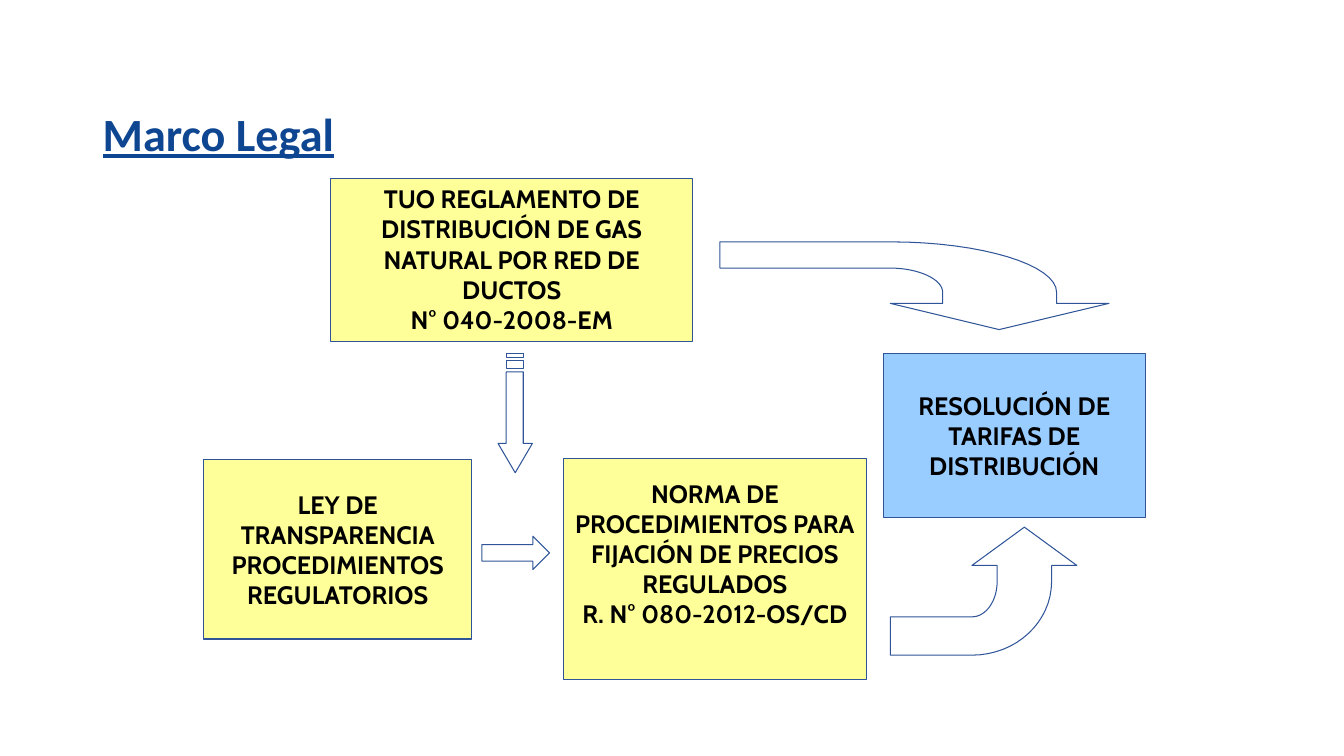
from dataclasses import dataclass
from lxml import etree
from pptx import Presentation, util as u
from pptx.enum import shapes as kinds, text as txt
from pptx.dml.color import RGBColor
from pptx.oxml.ns import qn

CELL = u.Inches(0.1)  # side of one grid column or row
COLS, ROWS = 133.3, 75
STEPS = 16  # chords per curve
HUES = {"yellow": "FFFF99", "blue": "99CCFF", "line": "2F5498",
        "white": "FFFFFF", "black": "000000", "title": "0F4691"}

Step = tuple[float, ...]  # 2 numbers: a line's end; 6: a Bézier curve
Path = list[Step]


@dataclass
class Box:
    area: tuple[float, float, float, float]
    hue: str
    inset: float
    lines: list[str]


BOXES = [
    Box((32.8, 17.7, 35.9, 16.2), "yellow", 0.5,
        ["TUO REGLAMENTO DE DISTRIBUCIÓN DE GAS NATURAL POR RED DE",
         "DUCTOS", "N° 040-2008-EM"]),
    Box((20.2, 45.6, 26.6, 17.8), "yellow", 2.9,
        ["LEY DE TRANSPARENCIA", "PROCEDIMIENTOS REGULATORIOS"]),
    Box((55.9, 45.5, 30, 21.9), "yellow", 1.9,
        ["NORMA DE PROCEDIMIENTOS PARA FIJACIÓN DE PRECIOS REGULADOS",
         "R. N° 080-2012-OS/CD"]),
    Box((87.6, 35.1, 26, 16.2), "blue", 3.6,
        ["RESOLUCIÓN DE TARIFAS DE DISTRIBUCIÓN"]),
]


def bar(top: float, end: float) -> Path:
    """Outline one stripe of the downward arrow's tail."""
    return [(51.9, top), (50.2, top), (50.2, end), (51.9, end)]


DOWN: list[Path] = [
    [(52.8, 44), (51.9, 44), (51.9, 36.9), (50.2, 36.9), (50.2, 44),
     (49.4, 44), (51.1, 46.9)],
    bar(35.8, 36.6), bar(35.1, 35.5),
]
OVER: list[Path] = [
    [(99.1, 32.7), (110, 30.1), (104.8, 30.1), (104.8, 29),
     (104.8, 26.3, 97.4, 24, 88.3, 24), (71.4, 24), (71.4, 26.6),
     (88.3, 26.6), (91.1, 26.6, 93.5, 27.7, 93.5, 29),
     (93.5, 30.1), (88.3, 30.1)],
]
UNDER: list[Path] = [
    [(101.6, 52.3), (106.8, 56.1), (104.3, 56.1), (104.3, 57.7),
     (104.3, 61.7, 100.8, 65, 96.4, 65), (88.3, 65), (88.3, 61.2),
     (96.4, 61.2), (97.8, 61.2, 98.9, 59.6, 98.9, 57.7),
     (98.9, 56.1), (96.4, 56.1)],
]


def grid(*cells: float) -> list[u.Emu]:
    return [u.Emu(round(n * CELL)) for n in cells]


def tint(name: str) -> RGBColor:
    return RGBColor.from_string(HUES[name])


def paint(shape, hue: str, alpha: int = 100) -> None:
    shape.shadow.inherit = False
    shape.fill.solid()
    shape.fill.fore_color.rgb = tint(hue)
    shape.line.color.rgb = tint("line")
    shape.line.width = u.Pt(0.75)
    if alpha < 100:
        tone = shape.fill._xPr.find(qn("a:solidFill"))[0]
        etree.SubElement(tone, qn("a:alpha")).set("val", str(alpha * 1000))


def flatten(path: Path) -> list[tuple[u.Emu, u.Emu]]:
    """Turn lines and curves into plain points."""
    out: list[Step] = []
    for step in path:
        if len(step) == 2:
            out.append(step)
            continue
        knots = [out[-1], step[:2], step[2:4], step[4:]]
        for i in range(1, STEPS + 1):
            t = i / STEPS
            mix = ((1 - t) ** 3, 3 * t * (1 - t) ** 2,
                   3 * t ** 2 * (1 - t), t ** 3)
            out.append(tuple(sum(m * k[a] for m, k in zip(mix, knots))
                             for a in (0, 1)))
    return [tuple(grid(*p)) for p in out]


def write(frame, lines: list[str], face: str, size: int, hue: str) -> None:
    frame.word_wrap = True
    frame.text = "\n".join(lines)
    for para in frame.paragraphs:
        font = para.font
        font.name, font.size, font.bold = face, u.Pt(size), True
        font.color.rgb = tint(hue)


def draw_box(slide, box: Box) -> None:
    shape = slide.shapes.add_shape(kinds.MSO_SHAPE.RECTANGLE, *grid(*box.area))
    paint(shape, box.hue)
    frame = shape.text_frame
    write(frame, box.lines, "Cabin", 18, "black")
    frame.vertical_anchor = txt.MSO_ANCHOR.TOP
    frame.margin_top = grid(box.inset)[0]
    for para in frame.paragraphs:
        para.alignment = txt.PP_ALIGN.CENTER


def draw_arrow(slide, paths: list[Path]) -> None:
    first, *rest = map(flatten, paths)
    pen = slide.shapes.build_freeform(*first[0])
    pen.add_line_segments(first[1:])
    for points in rest:
        pen.move_to(*points[0])
        pen.add_line_segments(points[1:])
    paint(pen.convert_to_shape(), "white", 41)


def draw_title(slide) -> None:
    frame = slide.shapes.add_textbox(*grid(9.2, 7.7, 105.4, 11.7)).text_frame
    write(frame, ["Marco Legal"], "Calibri", 33, "title")
    frame.vertical_anchor = txt.MSO_ANCHOR.MIDDLE
    para = frame.paragraphs[0]
    para.line_spacing = 0.9
    para.font.underline = True


def main() -> None:
    deck = Presentation()
    deck.slide_width, deck.slide_height = grid(COLS, ROWS)
    slide = deck.slides.add_slide(deck.slide_layouts[6])
    for box in BOXES:
        draw_box(slide, box)
    right = slide.shapes.add_shape(kinds.MSO_SHAPE.RIGHT_ARROW,
                                   *grid(47.8, 53.2, 6.7, 3.3))
    paint(right, "white", 41)
    for paths in (DOWN, OVER, UNDER):
        draw_arrow(slide, paths)
    draw_title(slide)
    deck.save("out.pptx")


if __name__ == "__main__":
    main()
